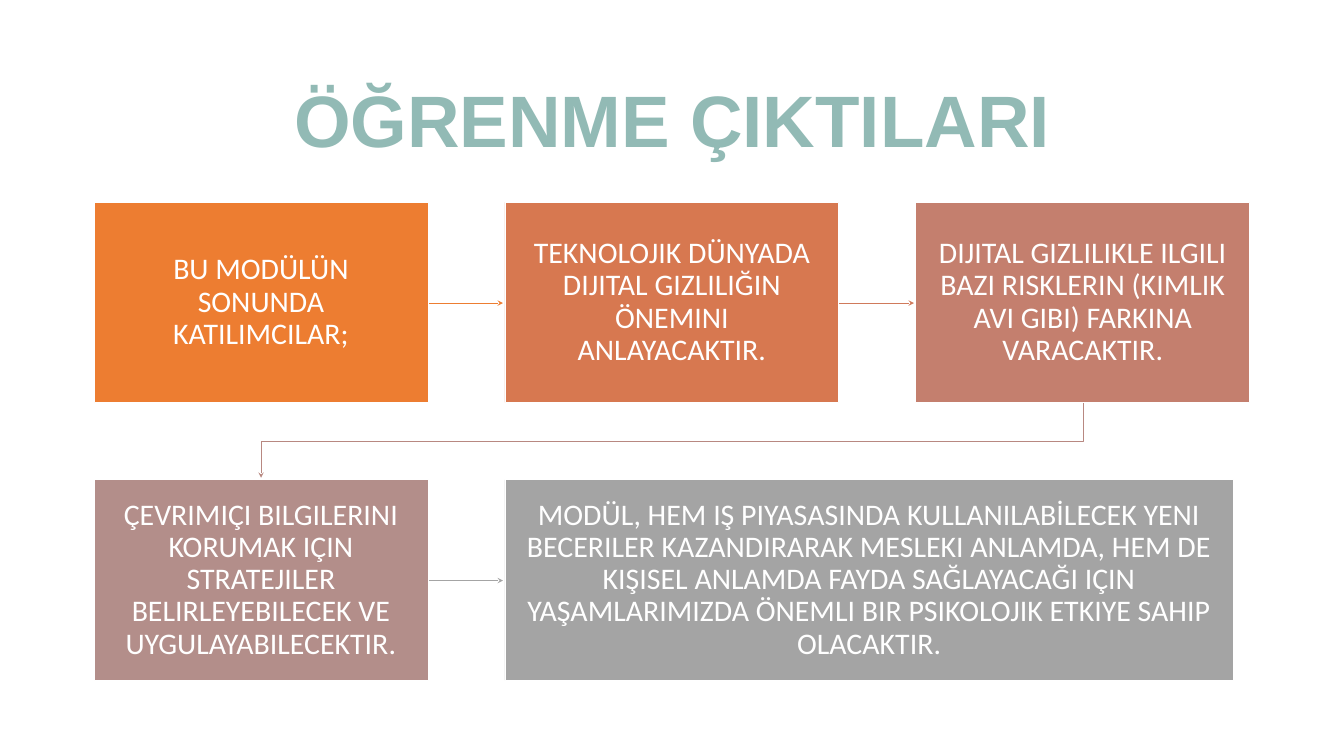
from lxml import etree
from pptx import Presentation
from pptx.dml.color import RGBColor
from pptx.enum import shapes, text
from pptx.oxml import ns
from pptx.util import Inches, Pt

WHITE = "FFFFFF"
TITLE = "ÖĞRENME ÇIKTILARI"
BOX_WIDTH, BOX_HEIGHT, WIDE_WIDTH = 4.97, 2.98, 10.84
COLUMN_STEP, ROW_STEP = 6.115, 4.13
ARROW_GAP = 0.03

# Column, row, width, fill, wording
STEPS = [
    (0, 0, BOX_WIDTH, "ED7D31", "BU MODÜLÜN SONUNDA KATILIMCILAR;"),
    (1, 0, BOX_WIDTH, "D77850",
     "TEKNOLOJIK DÜNYADA DIJITAL GIZLILIĞIN ÖNEMINI ANLAYACAKTIR."),
    (2, 0, BOX_WIDTH, "C47F6E",
     "DIJITAL GIZLILIKLE ILGILI BAZI RISKLERIN (KIMLIK AVI GIBI) "
     "FARKINA VARACAKTIR."),
    (0, 1, BOX_WIDTH, "B38E8A",
     "ÇEVRIMIÇI BILGILERINI KORUMAK IÇIN STRATEJILER BELIRLEYEBILECEK VE "
     "UYGULAYABILECEKTIR."),
    (1, 1, WIDE_WIDTH, "A4A4A4",
     "MODÜL, HEM IŞ PIYASASINDA KULLANILABİLECEK YENI BECERILER KAZANDIRARAK "
     "MESLEKI ANLAMDA, HEM DE KIŞISEL ANLAMDA FAYDA SAĞLAYACAĞI IÇIN "
     "YAŞAMLARIMIZDA ÖNEMLI BIR PSIKOLOJIK ETKIYE SAHIP OLACAKTIR."),
]
# Column, row, colour of the arrows to the next column
ARROWS = [(0, 0, "ED7D31"), (1, 0, "D07A5B"), (0, 1, "A4A4A4")]
RETURN_COLOUR = "B88881"


def colour(value):
    return RGBColor.from_string(value)


def write(shape, words, margins, font):
    """Put one centred paragraph in a shape."""
    frame = shape.text_frame
    frame.text = words
    settings = {
        "word_wrap": True,
        "auto_size": text.MSO_AUTO_SIZE.NONE,
        "vertical_anchor": text.MSO_ANCHOR.MIDDLE,
        "margin_left": Inches(margins[0]),
        "margin_right": Inches(margins[0]),
        "margin_top": Inches(margins[1]),
        "margin_bottom": Inches(margins[1]),
    }
    for name, value in settings.items():
        setattr(frame, name, value)
    para = frame.paragraphs[0]
    para.alignment = text.PP_ALIGN.CENTER
    para.line_spacing = 0.9
    span = para.runs[0]
    span.font.color.rgb = colour(font["colour"])
    for name in ("name", "size", "bold"):
        setattr(span.font, name, font[name])


def style_arrow(arrow, value):
    """Thin line with a stealth head at its end and no shadow."""
    arrow.line.color.rgb = colour(value)
    arrow.line.width = Pt(0.75)
    properties = arrow._element.spPr
    etree.SubElement(properties.find(ns.qn("a:ln")), ns.qn("a:tailEnd"), type="stealth")
    etree.SubElement(properties, ns.qn("a:effectLst"))


def add_title(page, left, top, width, height):
    title = page.shapes.title
    title.left, title.top = Inches(left), Inches(top)
    title.width, title.height = Inches(width), Inches(height)
    write(title, TITLE, (0.1, 0.05),
          {"name": "Arial", "size": Pt(78), "bold": True, "colour": "92BAB5"})


def add_step(page, left, top, width, fill, words):
    box = page.shapes.add_shape(shapes.MSO_SHAPE.RECTANGLE, Inches(left), Inches(top),
                                Inches(width), Inches(BOX_HEIGHT))
    box.shadow.inherit = False
    box.fill.solid()
    box.fill.fore_color.rgb = colour(fill)
    box.line.color.rgb = colour(WHITE)
    box.line.width = Pt(1)
    write(box, words, (0.24, 0.26),
          {"name": "Calibri", "size": Pt(32), "bold": False, "colour": WHITE})


def add_return_arrow(page, start_x, start_y, end_x, end_y):
    """Run down, back to the first column, and down to the next row."""
    bend_y = start_y + 0.58
    outline = page.shapes.build_freeform(Inches(start_x), Inches(start_y))
    corners = [(start_x, bend_y), (end_x, bend_y), (end_x, end_y)]
    outline.add_line_segments([(Inches(x), Inches(y)) for x, y in corners], close=False)
    arrow = outline.convert_to_shape()
    arrow.fill.background()
    style_arrow(arrow, RETURN_COLOUR)


def add_process(page, left, top):
    def corner(column, row):
        return left + column * COLUMN_STEP, top + row * ROW_STEP

    # Arrows along the rows
    for column, row, value in ARROWS:
        x, y = corner(column, row)
        middle = Inches(y + BOX_HEIGHT / 2 + 0.01)
        arrow = page.shapes.add_connector(
            shapes.MSO_CONNECTOR.STRAIGHT, Inches(x + BOX_WIDTH), middle,
            Inches(x + COLUMN_STEP - ARROW_GAP), middle)
        style_arrow(arrow, value)

    # Arrow from the first row to the second
    last_x, first_row = corner(2, 0)
    first_x, second_row = corner(0, 1)
    add_return_arrow(page, last_x + BOX_WIDTH / 2, first_row + BOX_HEIGHT,
                     first_x + BOX_WIDTH / 2, second_row - ARROW_GAP)

    # Step boxes
    for column, row, width, fill, words in STEPS:
        add_step(page, *corner(column, row), width, fill, words)


def main():
    deck = Presentation()
    deck.slide_width, deck.slide_height = Inches(20), Inches(11.25)
    page = deck.slides.add_slide(deck.slide_layouts[5])
    add_title(page, 1.38, 0.91, 17.25, 1.86)
    add_process(page, 1.4, 3.01)
    deck.save("out.pptx")


if __name__ == "__main__":
    main()
